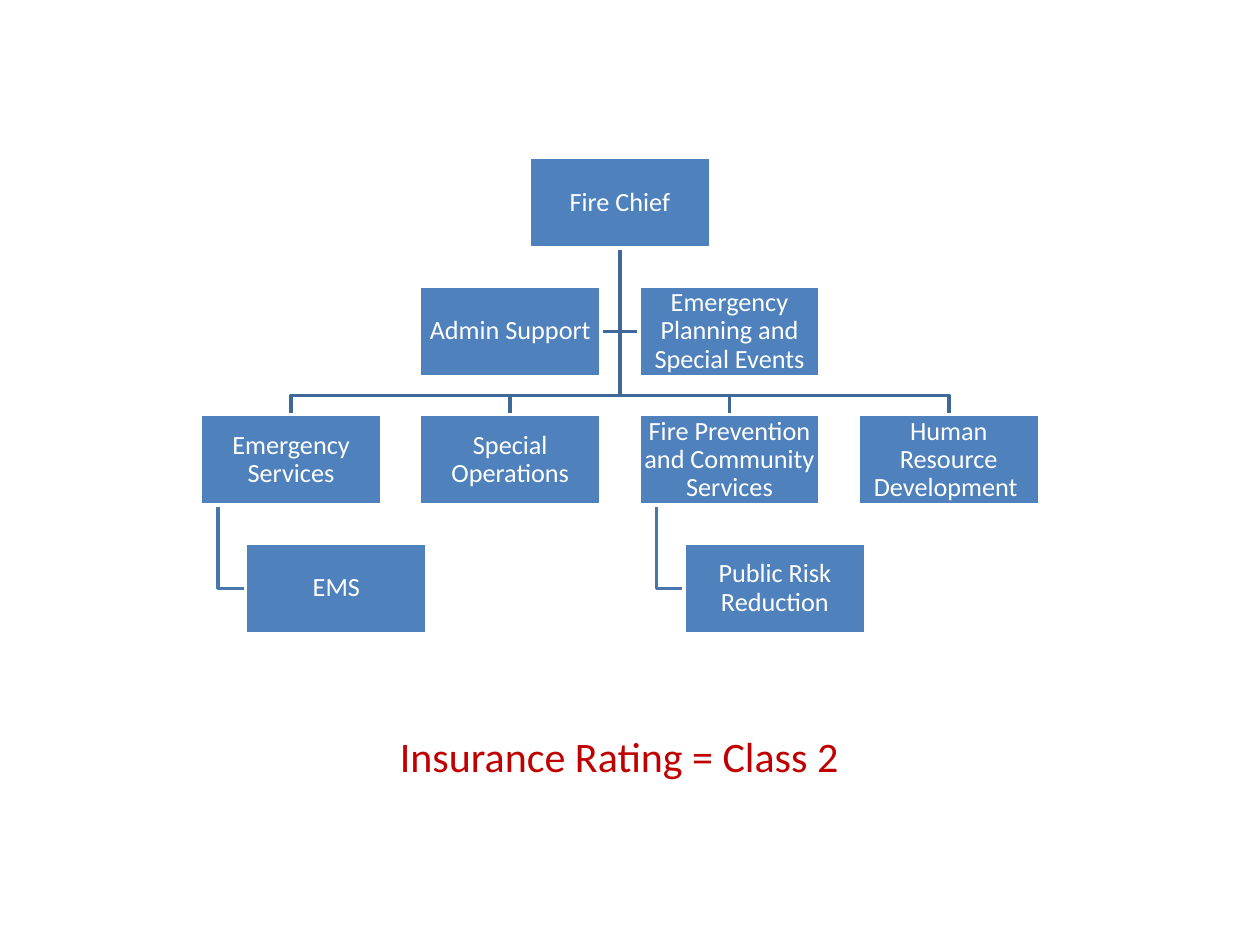
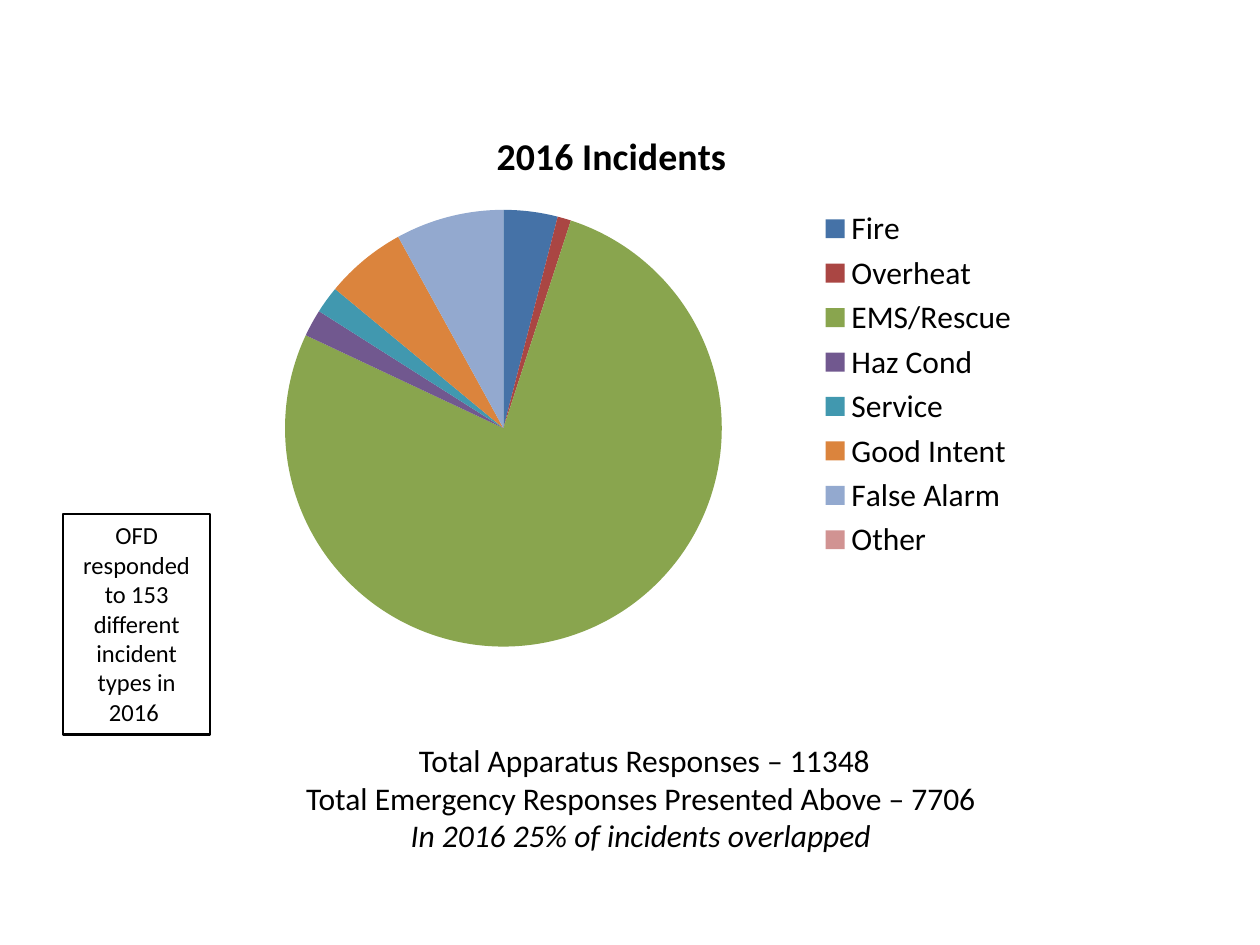
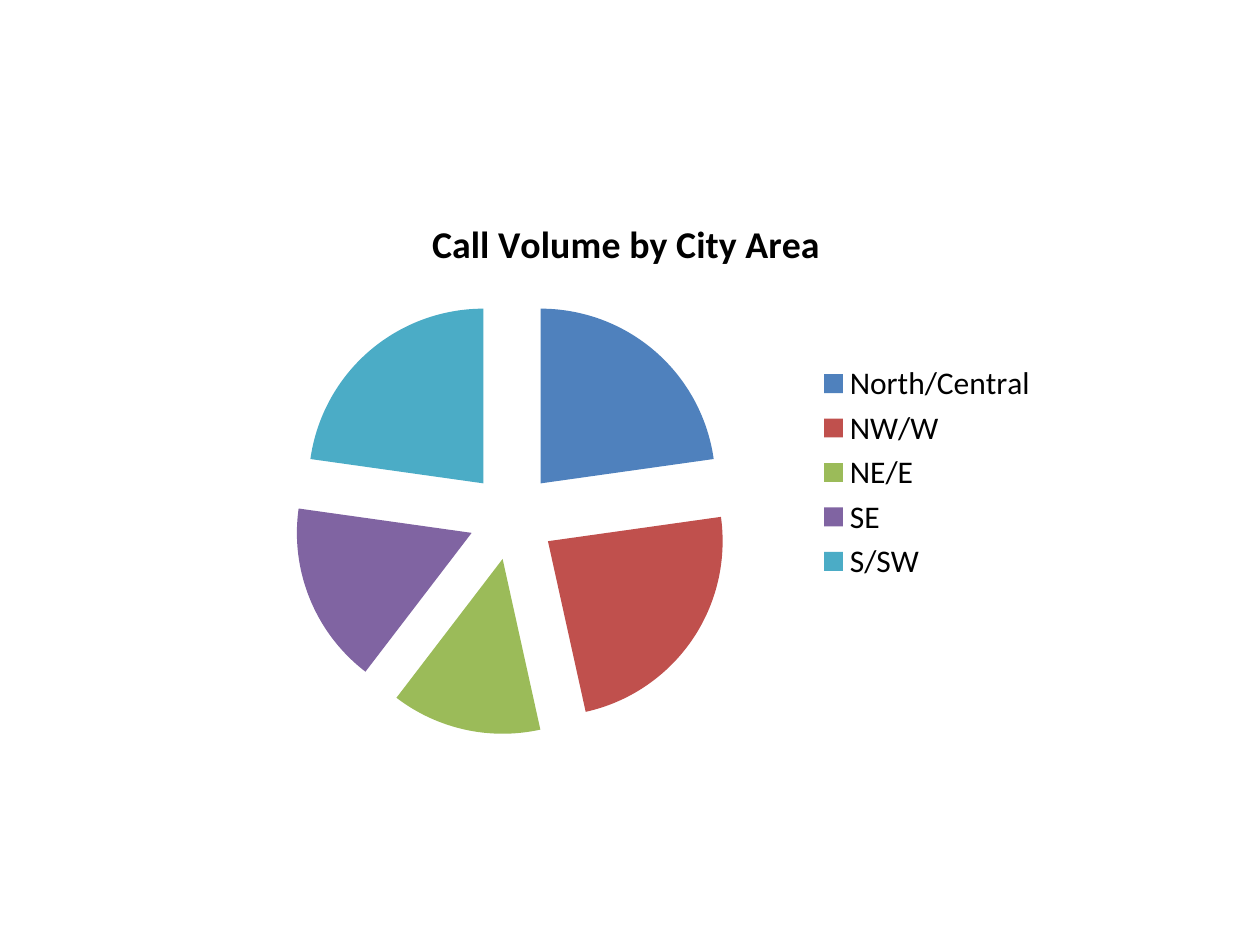
from lxml import etree
from pptx import Presentation
from pptx import util as u
from pptx.chart.data import CategoryChartData
from pptx.dml.color import RGBColor
from pptx.enum import chart as charts, shapes, text
from pptx.oxml import ns


def paint(code):
    """Turn a hex string into a colour."""
    return RGBColor.from_string(code)


class Deck:
    """Holds the style and the current slide."""

    font = "Calibri"
    white, black, blue, red = "FFFFFF", "000000", "4F81BD", "C00000"
    trunk, twig = "3F6797", "4875AC"

    def __init__(self):
        """Start an empty deck."""
        self.prs = Presentation()
        self.prs.slide_width = u.Inches(10)
        self.prs.slide_height = u.Inches(7.5)

    def page(self):
        """Add a blank slide and make it current."""
        self.slide = self.prs.slides.add_slide(self.prs.slide_layouts[6])

    def label(self, shape, lines, size, color, anchor=text.MSO_ANCHOR.TOP):
        """Fill a shape with centred lines of text."""
        frame = shape.text_frame
        frame.text = "\n".join(lines)
        frame.word_wrap = True
        frame.vertical_anchor = anchor
        for para in frame.paragraphs:
            para.alignment = text.PP_ALIGN.CENTER
            for run in para.runs:
                run.font.name = self.font
                run.font.size = u.Pt(size)
                run.font.color.rgb = paint(color)
        return frame

    def note(self, area, lines, size, color):
        """Add a plain text box that fits its text."""
        box = self.slide.shapes.add_textbox(*map(u.Inches, area))
        frame = self.label(box, lines, size, color)
        frame.auto_size = text.MSO_AUTO_SIZE.SHAPE_TO_FIT_TEXT
        return frame

    def rect(self, area, line, width, fill=None):
        """Add an outlined rectangle."""
        shape = self.slide.shapes.add_shape(
            shapes.MSO_SHAPE.RECTANGLE, *map(u.Inches, area))
        self.dress(shape, line, width, fill)
        return shape

    def dress(self, shape, line, width, fill=None):
        """Set the line and fill of a shape."""
        shape.shadow.inherit = False
        shape.line.color.rgb = paint(line)
        shape.line.width = u.Pt(width)
        if fill:
            shape.fill.solid()
            shape.fill.fore_color.rgb = paint(fill)
        else:
            shape.fill.background()

    def unit(self, left, top, wide, high, name):
        """Add one box of the organisation chart."""
        shape = self.rect((left, top, wide, high), self.white, 2, self.blue)
        frame = self.label(shape, [name], 15, self.white,
                           text.MSO_ANCHOR.MIDDLE)
        frame.margin_left = frame.margin_right = u.Inches(0.01)
        frame.margin_top = frame.margin_bottom = u.Inches(0.01)
        frame.paragraphs[0].line_spacing = 0.9

    def bend(self, points, color):
        """Draw an open line with corners."""
        start, *rest = [tuple(map(u.Inches, p)) for p in points]
        pen = self.slide.shapes.build_freeform(*start)
        pen.add_line_segments(rest, close=False)
        self.dress(pen.convert_to_shape(), color, 2)

    def pie(self, area, title, name, parts, explode=0):
        """Add a pie chart from (label, value, colour) parts."""
        data = CategoryChartData()
        data.categories = [part for part, _, _ in parts]
        data.add_series(name, [value for _, value, _ in parts])
        chart = self.slide.shapes.add_chart(
            charts.XL_CHART_TYPE.PIE, *map(u.Inches, area), data).chart
        chart.font.name = self.font
        chart.font.size = u.Pt(18)
        chart.font.color.rgb = paint(self.black)
        chart.has_title = True
        chart.chart_title.text_frame.text = title
        head = chart.chart_title.text_frame.paragraphs[0].runs[0].font
        head.name, head.size, head.bold = self.font, u.Pt(21.6), True
        head.color.rgb = paint(self.black)
        chart.has_legend = True
        chart.legend.position = charts.XL_LEGEND_POSITION.RIGHT
        chart.legend.include_in_layout = False
        plot = chart.plots[0]
        plot.vary_by_categories = True
        series = plot.series[0]
        for i, (_, _, color) in enumerate(parts):
            fill = series.points[i].format.fill
            fill.solid()
            fill.fore_color.rgb = paint(color)
        if explode:
            mark = etree.Element(ns.qn("c:explosion"), val=str(explode))
            series._element.find(ns.qn("c:tx")).addnext(mark)


def staff(deck):
    """Build the organisation chart."""
    deck.page()
    wide, high, left, top = 1.44, 0.72, 1.59, 1.25
    across, down, inset = 1.74, 1.02, 0.36

    def spot(col, row):
        """Give the corner of a grid place."""
        return left + col * across, top + row * down

    chief = spot(1.5, 0)
    root = chief[0] + wide / 2, top + high
    aides = [(1, "Admin Support"), (2, "Emergency Planning and Special Events")]
    heads = ["Emergency Services", "Special Operations",
             "Fire Prevention and Community Services",
             "Human Resource Development "]
    teams = [(0, "EMS"), (2, "Public Risk Reduction")]
    boxes = [(*chief, "Fire Chief")]

    for col, name in aides:
        x, y = spot(col, 1)
        mid = y + high / 2
        edge = x + wide if x < root[0] else x
        deck.bend([root, (root[0], mid), (edge, mid)], deck.trunk)
        boxes.append((x, y, name))
    for col, name in enumerate(heads):
        x, y = spot(col, 2)
        mid, bar = x + wide / 2, y - 0.15
        deck.bend([root, (root[0], bar), (mid, bar), (mid, y)], deck.trunk)
        boxes.append((x, y, name))
    for col, name in teams:
        x, y = spot(col, 3)
        stem, mid = x + 0.14, y + high / 2
        deck.bend([(stem, y - down + high), (stem, mid), (x + inset, mid)],
                  deck.twig)
        boxes.append((x + inset, y, name))
    for x, y, name in boxes:
        deck.unit(x, y, wide, high, name)
    deck.note((1.5, 5.75, 6.83, 0.5), ["Insurance Rating = Class 2"],
              24, deck.red)


def calls(deck):
    """Build the pie of incidents."""
    deck.page()
    deck.pie((1.52, 0.83, 6.67, 4.44), "2016 Incidents", "Series 1", [
        ("Fire", 4, "4572A7"), ("Overheat", 1, "AA4643"),
        ("EMS/Rescue", 77, "89A54E"), ("Haz Cond", 2, "71588F"),
        ("Service", 2, "4198AF"), ("Good Intent", 6, "DB843D"),
        ("False Alarm", 8, "93A9CF"), ("Other", 0, "D19392")])
    frame = deck.note((1.49, 5.83, 7.25, 1.01), [
        "Total Apparatus Responses – 11348",
        "Total Emergency Responses Presented Above – 7706 ",
        "In 2016 25% of incidents overlapped "], 18, deck.black)
    frame.paragraphs[-1].runs[0].font.italic = True
    box = deck.rect((0.5, 4.08, 1.17, 1.75), deck.black, 1.25)
    deck.label(box, ["OFD responded to 153 different incident types in 2016 "],
               14, deck.black)


def areas(deck):
    """Build the pie of city areas."""
    deck.page()
    title = "Call Volume by City Area "
    deck.pie((1.67, 1.53, 6.67, 4.44), title, title, [
        ("North/Central", 23, deck.blue), ("NW/W", 24, "C0504D"),
        ("NE/E", 14, "9BBB59"), ("SE", 17, "8064A2"),
        ("S/SW", 23, "4BACC6")], explode=25)


def main():
    """Build and save the deck."""
    deck = Deck()
    for build in (staff, calls, areas):
        build(deck)
    deck.prs.save("out.pptx")


if __name__ == "__main__":
    main()
